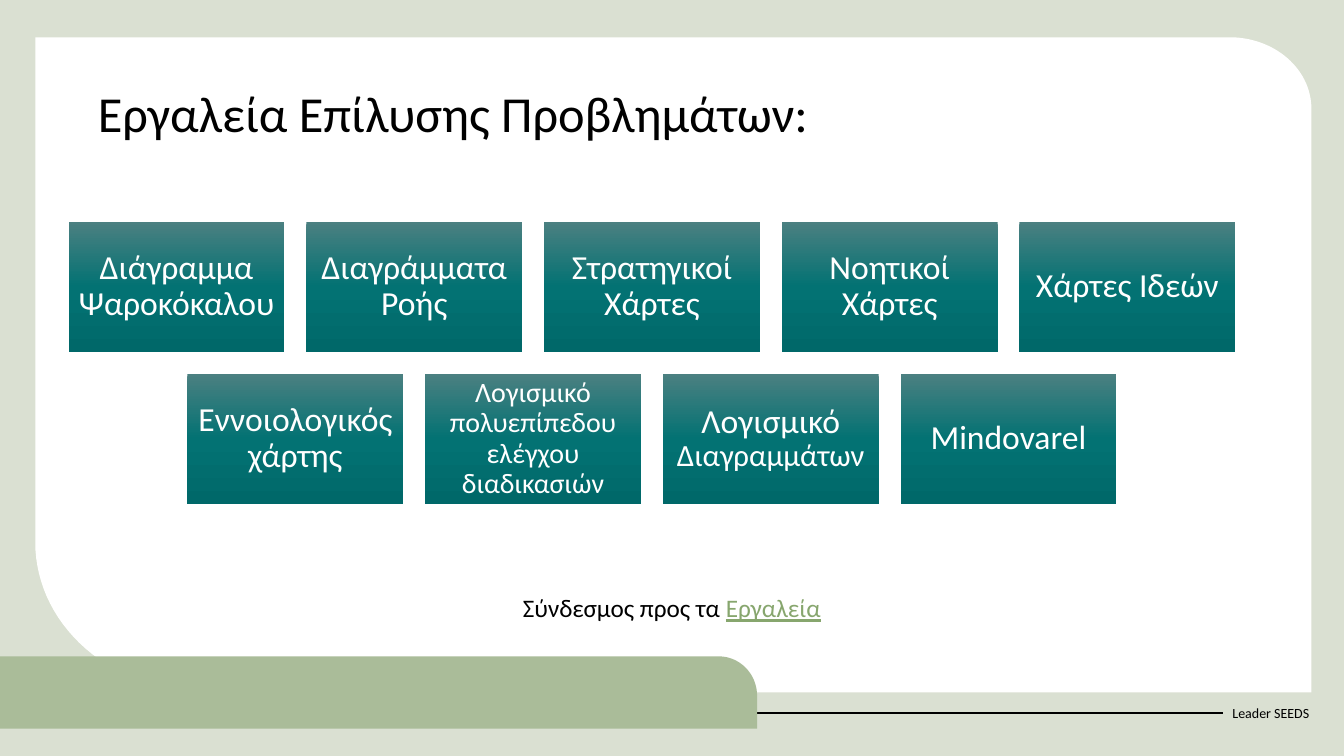
from copy import deepcopy
from math import cos, radians, sin

from lxml.etree import SubElement
from pptx import Presentation
from pptx.dml.color import RGBColor
from pptx.enum.shapes import MSO_CONNECTOR, MSO_SHAPE
from pptx.enum.text import MSO_ANCHOR, MSO_AUTO_SIZE, PP_ALIGN
from pptx.oxml.ns import qn
from pptx.util import Cm, Pt

FONT = "Calibri"
BLACK = RGBColor(0x00, 0x00, 0x00)
WHITE = RGBColor(0xFF, 0xFF, 0xFF)
PALE_GREEN = RGBColor(0xDA, 0xE0, 0xD2)
SAGE = RGBColor(0xAA, 0xBC, 0x99)
LINK_GREEN = RGBColor(0x87, 0xA6, 0x6E)
TILE_GRADIENT = (
    (0, RGBColor(0x4B, 0x80, 0x81)),
    (0.5, RGBColor(0x03, 0x72, 0x73)),
    (1, RGBColor(0x00, 0x68, 0x69)),
)

TILE_WIDTH, TILE_HEIGHT = 5.44, 3.28
TILE_PITCH, ROW_PITCH = 5.99, 3.83
TILES_LEFT, TILES_TOP = 1.73, 5.59
COLUMNS = 5
TILE_ROWS = (
    (
        (("Διάγραμμα Ψαροκόκαλου", 24),),
        (("Διαγράμματα Ροής", 24),),
        (("Στρατηγικοί Χάρτες", 24),),
        (("Νοητικοί Χάρτες", 24),),
        (("Χάρτες Ιδεών", 24),),
    ),
    (
        (("Εννοιολογικός χάρτης", 24),),
        (("Λογισμικό πολυεπίπεδου ελέγχου διαδικασιών", 20),),
        (("Λογισμικό ", 24), ("Διαγραμμάτων", 22)),
        (("Mindovarel", 24),),
    ),
)


def write_text(shape, text, size=18, color=BLACK, underline=None,
               align=PP_ALIGN.LEFT, anchor=MSO_ANCHOR.TOP, spacing=1.0):
    """Append a formatted run to the first paragraph of a shape."""
    frame = shape.text_frame
    frame.word_wrap = True
    frame.auto_size = MSO_AUTO_SIZE.NONE
    frame.vertical_anchor = anchor
    paragraph = frame.paragraphs[0]
    paragraph.alignment = align
    paragraph.line_spacing = spacing
    paragraph.space_before = Pt(0)
    run = paragraph.add_run()
    run.text = text
    run.font.name = FONT
    run.font.size = Pt(size)
    run.font.color.rgb = color
    run.font.underline = underline


def add_text_box(slide, left, top, width, height):
    """Add an empty text box, measured in centimetres."""
    return slide.shapes.add_textbox(Cm(left), Cm(top), Cm(width), Cm(height))


def corner(center_x, center_y, radius_x, radius_y, start):
    """Return the points of a quarter ellipse that begins at an angle."""
    angles = [radians(start + step) for step in range(0, 91, 3)]
    return [(Cm(center_x + radius_x * cos(angle)), Cm(center_y + radius_y * sin(angle)))
            for angle in angles]


def add_outline(slide, points, color):
    """Add a closed, filled freeform through the points."""
    builder = slide.shapes.build_freeform(*points[0])
    builder.add_line_segments(points[1:], close=True)
    shape = builder.convert_to_shape()
    shape.shadow.inherit = False
    shape.fill.solid()
    shape.fill.fore_color.rgb = color
    shape.line.fill.background()


def add_rule(slide, left, right, top):
    """Add the thin black line beside the footer."""
    connector = slide.shapes.add_connector(
        MSO_CONNECTOR.STRAIGHT, Cm(left), Cm(top), Cm(right), Cm(top))
    connector.line.color.rgb = BLACK
    connector.line.width = Pt(1.5)
    SubElement(connector._element.spPr, qn("a:effectLst"))


def fill_gradient(fill, colors):
    """Fill from top to bottom with three colours."""
    fill.gradient()
    fill.gradient_angle = 270
    first = fill._xPr.find(".//" + qn("a:gs"))
    first.addnext(deepcopy(first))
    for stop, (position, color) in zip(fill.gradient_stops, colors):
        stop.position = position
        stop.color.rgb = color


def add_tile(slide, left, top, runs):
    """Add one tool tile with its centred label."""
    tile = slide.shapes.add_shape(
        MSO_SHAPE.RECTANGLE, Cm(left), Cm(top), Cm(TILE_WIDTH), Cm(TILE_HEIGHT))
    tile.shadow.inherit = False
    tile.line.fill.background()
    fill_gradient(tile.fill, TILE_GRADIENT)
    frame = tile.text_frame
    inset = Cm(runs[0][1] / 100)
    frame.margin_left = frame.margin_right = inset
    frame.margin_top = frame.margin_bottom = inset
    for text, size in runs:
        write_text(tile, text, size=size, color=WHITE, align=PP_ALIGN.CENTER,
                   anchor=MSO_ANCHOR.MIDDLE, spacing=0.9)


def add_background(slide):
    """Add the page colour, white panel, sage band and footer."""
    slide.background.fill.solid()
    slide.background.fill.fore_color.rgb = PALE_GREEN
    panel = [(Cm(0.89), Cm(0.94)), *corner(30.99, 2.74, 2.06, 1.8, -90),
             (Cm(33.05), Cm(17.45)), *corner(5.21, 13.67, 4.32, 3.78, 90)]
    add_outline(slide, panel, WHITE)
    footer = add_text_box(slide, 30.81, 17.45, 2.57, 1.02)
    write_text(footer, "Leader SEEDS", size=10, anchor=MSO_ANCHOR.MIDDLE)
    add_rule(slide, 0, 30.81, 17.96)
    band = [(Cm(0), Cm(18.36)), (Cm(0), Cm(16.54)),
            *corner(18.11, 17.53, 0.97, 0.99, -90), (Cm(19.08), Cm(18.36))]
    add_outline(slide, band, SAGE)


def place_title(slide, text):
    """Position the title placeholder above the background and write it."""
    title = slide.shapes.title
    title.left, title.top, title.width, title.height = Cm(2.21), Cm(2.11), Cm(29.44), Cm(2.24)
    slide.shapes._spTree.append(title._element)
    write_text(title, text, size=36, spacing=0.9)


def main():
    """Build and save the slide."""
    presentation = Presentation()
    presentation.slide_width, presentation.slide_height = Cm(33.87), Cm(19.05)
    slide = presentation.slides.add_slide(presentation.slide_layouts[5])
    add_background(slide)
    place_title(slide, "Εργαλεία Επίλυσης Προβλημάτων:")
    for row, tiles in enumerate(TILE_ROWS):
        left = TILES_LEFT + (COLUMNS - len(tiles)) * TILE_PITCH / 2
        for column, runs in enumerate(tiles):
            add_tile(slide, left + column * TILE_PITCH, TILES_TOP + row * ROW_PITCH, runs)
    link = add_text_box(slide, 8.46, 14.66, 16.94, 1.12)
    write_text(link, "Σύνδεσμος προς τα ", align=PP_ALIGN.CENTER, spacing=1.2)
    write_text(link, "Εργαλεία", color=LINK_GREEN, underline=True,
               align=PP_ALIGN.CENTER, spacing=1.2)
    presentation.save("out.pptx")


if __name__ == "__main__":
    main()
